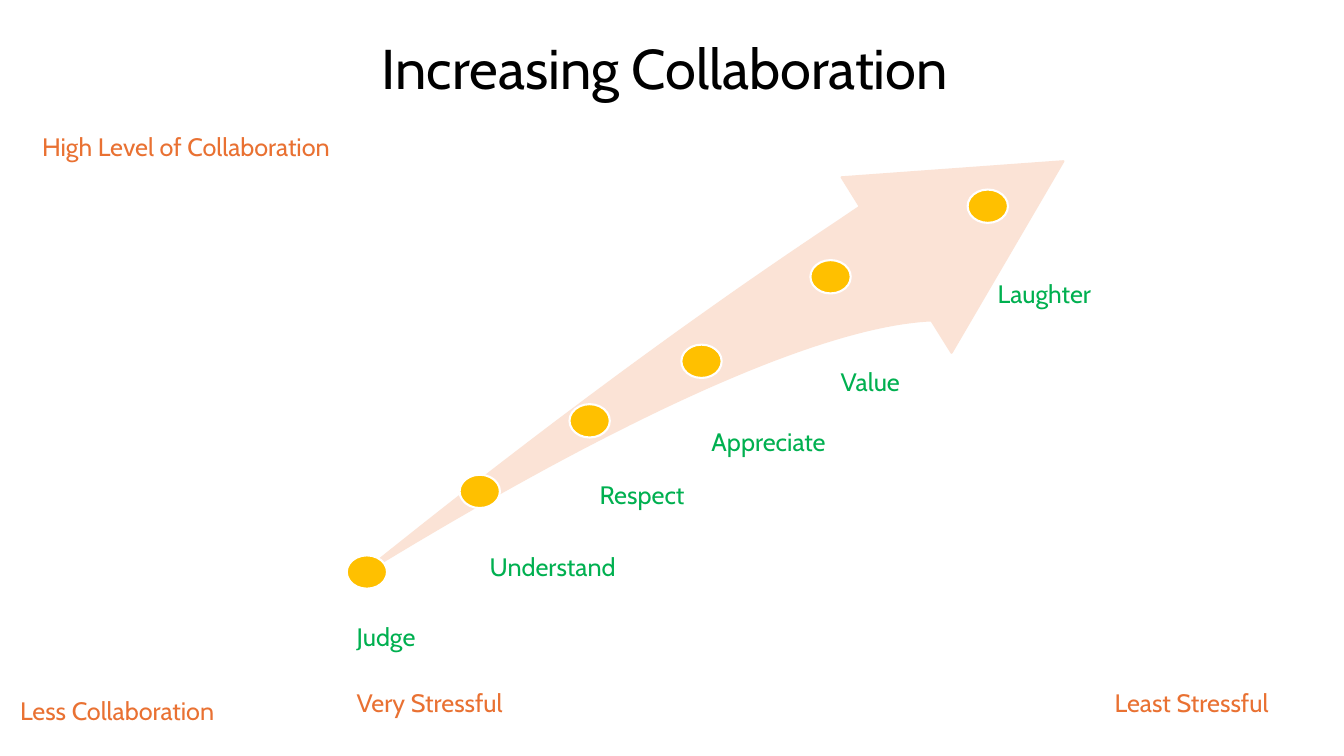
from typing import NamedTuple

from pptx import Presentation
from pptx import util as u
from pptx.dml.color import RGBColor
from pptx.enum import shapes, text

FONT = "Cabin"
BLACK, WHITE = "000000", "FFFFFF"
GREEN, ORANGE, GOLD, PEACH = "00B050", "E97132", "FFC000", "FBE3D6"
DOT_W, DOT_H = 28.8, 23.8
LABEL_H = 29
CURVE_STEPS = 40

Point = tuple[float, float]


class Stage(NamedTuple):
    name: str
    dot_x: float
    dot_y: float
    label_y: float
    label_w: float
    label_dx: float = DOT_W / 2


class Label(NamedTuple):
    wording: str
    x: float
    y: float
    w: float
    h: float = LABEL_H
    size: float = 18
    color: str = ORANGE


STAGES = [
    Stage("Judge", 247.7, 396.7, 439.9, 59, 0),
    Stage("Understand", 328.3, 339.1, 390.2, 107.3),
    Stage("Respect", 406.8, 288.7, 339.1, 79.2),
    Stage("Appreciate", 486.7, 246.2, 301, 100.1),
    Stage("Value", 578.9, 185.8, 257.8, 58.3),
    Stage("Laughter", 691.2, 135.4, 195.1, 84.2),
]

LABELS = [
    Label("Increasing Collaboration", 265.7, 20.2, 441.4, 55.4, 40, BLACK),
    Label("High Level of Collaboration", 23, 90, 224.6),
    Label("Less Collaboration", 7.2, 493.2, 162),
    Label("Least Stressful", 789.1, 487.4, 135.4),
    Label("Very Stressful", 247.7, 487.4, 126),
]

ARROW_TIP = (759.6, 115.2)
ARROW_TAIL = (254.9, 412.6)
HEAD_LOWER = [(679.7, 252), (665.3, 229)]
HEAD_UPPER = [(614.2, 147.6), (601.2, 126.7)]
LOWER_EDGE = [(663.1, 229), (588.2, 233.3), (450.7, 292.3), ARROW_TAIL]
UPPER_EDGE = [ARROW_TAIL, (373.7, 316.8), (489.6, 230.4), (596.2, 159.8)]


def rgb(color: str) -> RGBColor:
    return RGBColor.from_string(color)


def bezier(controls: list[Point]) -> list[Point]:
    """Return evenly stepped points along a cubic Bézier curve."""
    points = []
    for i in range(CURVE_STEPS + 1):
        t = i / CURVE_STEPS
        weights = ((1 - t) ** 3, 3 * t * (1 - t) ** 2, 3 * t**2 * (1 - t), t**3)
        x, y = (sum(k * c for k, c in zip(weights, axis)) for axis in zip(*controls))
        points.append((x, y))
    return points


def paint(sp, fill: str, line: str) -> None:
    sp.shadow.inherit = False
    sp.fill.solid()
    sp.fill.fore_color.rgb = rgb(fill)
    sp.line.color.rgb = rgb(line)
    sp.line.width = u.Pt(1.5)


def add_arrow(s) -> None:
    outline = HEAD_LOWER + bezier(LOWER_EDGE) + bezier(UPPER_EDGE) + HEAD_UPPER
    start, *rest = [(u.Pt(x), u.Pt(y)) for x, y in [ARROW_TIP, *outline]]
    builder = s.shapes.build_freeform(*start)
    builder.add_line_segments(rest, close=True)
    paint(builder.convert_to_shape(), PEACH, PEACH)


def add_dot(s, stage: Stage) -> None:
    sp = s.shapes.add_shape(
        shapes.MSO_SHAPE.OVAL,
        u.Pt(stage.dot_x), u.Pt(stage.dot_y), u.Pt(DOT_W), u.Pt(DOT_H),
    )
    paint(sp, GOLD, WHITE)


def add_label(s, label: Label) -> None:
    sp = s.shapes.add_textbox(
        u.Pt(label.x), u.Pt(label.y), u.Pt(label.w), u.Pt(label.h)
    )
    tf = sp.text_frame
    tf.word_wrap = False
    tf.auto_size = text.MSO_AUTO_SIZE.SHAPE_TO_FIT_TEXT
    p = tf.paragraphs[0]
    p.text = label.wording
    p.font.name = FONT
    p.font.size = u.Pt(label.size)
    p.font.color.rgb = rgb(label.color)


def main() -> None:
    prs = Presentation()
    prs.slide_width, prs.slide_height = u.Pt(960), u.Pt(540)
    s = prs.slides.add_slide(prs.slide_layouts[6])
    add_arrow(s)
    for stage in STAGES:
        add_dot(s, stage)
    for stage in STAGES:
        x = stage.dot_x + stage.label_dx
        add_label(s, Label(stage.name, x, stage.label_y, stage.label_w, color=GREEN))
    for label in LABELS:
        add_label(s, label)
    prs.save("out.pptx")


if __name__ == "__main__":
    main()
